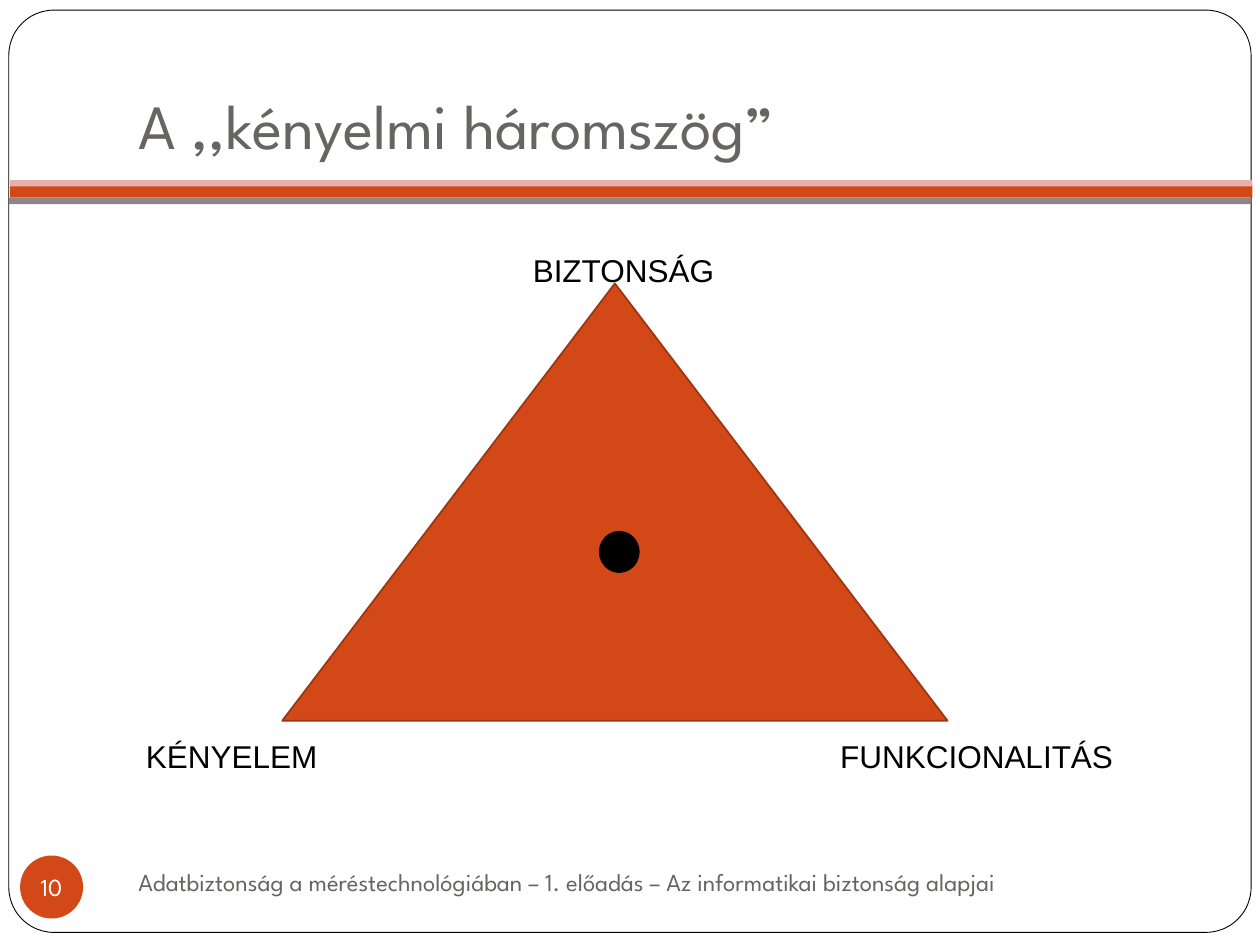
import pptx
import pptx.util
import pptx.dml.color
import pptx.enum.shapes
import pptx.enum.text

Inches, Pt = pptx.util.Inches, pptx.util.Pt
SHAPE = pptx.enum.shapes.MSO_SHAPE
ANCHOR = pptx.enum.text.MSO_ANCHOR
ALIGN = pptx.enum.text.PP_ALIGN
RGB = pptx.dml.color.RGBColor.from_string
COLORS = {"accent": "D34817", "edge": "9C3511", "pink": "E6B1AC", "taupe": "918485",
          "gray": "696464", "white": "FFFFFF", "black": "000000"}

prs = pptx.Presentation()
prs.slide_width, prs.slide_height = Inches(10), Inches(7.5)
s = prs.slides.add_slide(prs.slide_layouts[5])


def add_shape(kind, x, y, w, h, fill, line=None, width=1):
    sp = s.shapes.add_shape(kind, Inches(x), Inches(y), Inches(w), Inches(h))
    sp.shadow.inherit = False
    sp.fill.solid()
    sp.fill.fore_color.rgb = RGB(COLORS[fill])
    if line:
        sp.line.color.rgb = RGB(COLORS[line])
        sp.line.width = Pt(width)
    else:
        sp.line.fill.background()
    return sp


def set_text(sp, text, size, color, font="League Spartan", align=ALIGN.LEFT,
             anchor=ANCHOR.MIDDLE, wrap=True):
    tf = sp.text_frame
    tf.text = text
    tf.word_wrap = wrap
    tf.vertical_anchor = anchor
    p = tf.paragraphs[0]
    p.alignment = align
    p.font.name, p.font.size = font, Pt(size)
    p.font.color.rgb = RGB(COLORS[color])
    return tf


# Frame and header bands
frame = add_shape(SHAPE.ROUNDED_RECTANGLE, 0.07, 0.08, 9.86, 7.32, "white", "black", 0.5)
frame.adjustments[0] = 0.049
for x, y, h, fill in [(0.08, 1.47, 0.1, "accent"), (0.08, 1.43, 0.05, "pink"),
                      (0.07, 1.57, 0.05, "taupe")]:
    add_shape(SHAPE.RECTANGLE, x, y, 9.86, h, fill)

# Title, brought in front of the frame
title = s.shapes.title
title.left, title.top, title.width, title.height = Inches(1), Inches(0.3), Inches(8.5), Inches(1.09)
tf = set_text(title, "A ,,kényelmi háromszög”", 36, "gray", anchor=ANCHOR.BOTTOM)
tf.auto_size = pptx.enum.text.MSO_AUTO_SIZE.NONE
tf.margin_bottom = Inches(0.1)
s.shapes[-1].element.addnext(title.element)

# Page number and footer
badge = add_shape(SHAPE.OVAL, 0.16, 6.79, 0.5, 0.5, "accent")
tf = set_text(badge, "10", 14, "white", align=ALIGN.CENTER, wrap=False)
tf.margin_left = tf.margin_right = tf.margin_top = tf.margin_bottom = 0
footer = s.shapes.add_textbox(Inches(1), Inches(6.75), Inches(8.49), Inches(0.5))
set_text(footer, "Adatbiztonság a méréstechnológiában – 1. előadás – "
         "Az informatikai biztonság alapjai", 14, "gray")

# Triangle with its corner labels and centre point
add_shape(SHAPE.ISOSCELES_TRIANGLE, 2.24, 2.25, 5.28, 3.47, "accent", "edge")
for text, x, y, w in [("BIZTONSÁG", 4.13, 1.94, 1.65), ("KÉNYELEM", 1.06, 5.8, 1.65),
                      ("FUNKCIONALITÁS", 6.57, 5.8, 2.44)]:
    label = s.shapes.add_textbox(Inches(x), Inches(y), Inches(w), Inches(0.4))
    set_text(label, text, 18, "black", font="Arial", anchor=ANCHOR.TOP)
add_shape(SHAPE.OVAL, 4.76, 4.22, 0.31, 0.32, "black", "black")

prs.save("out.pptx")
